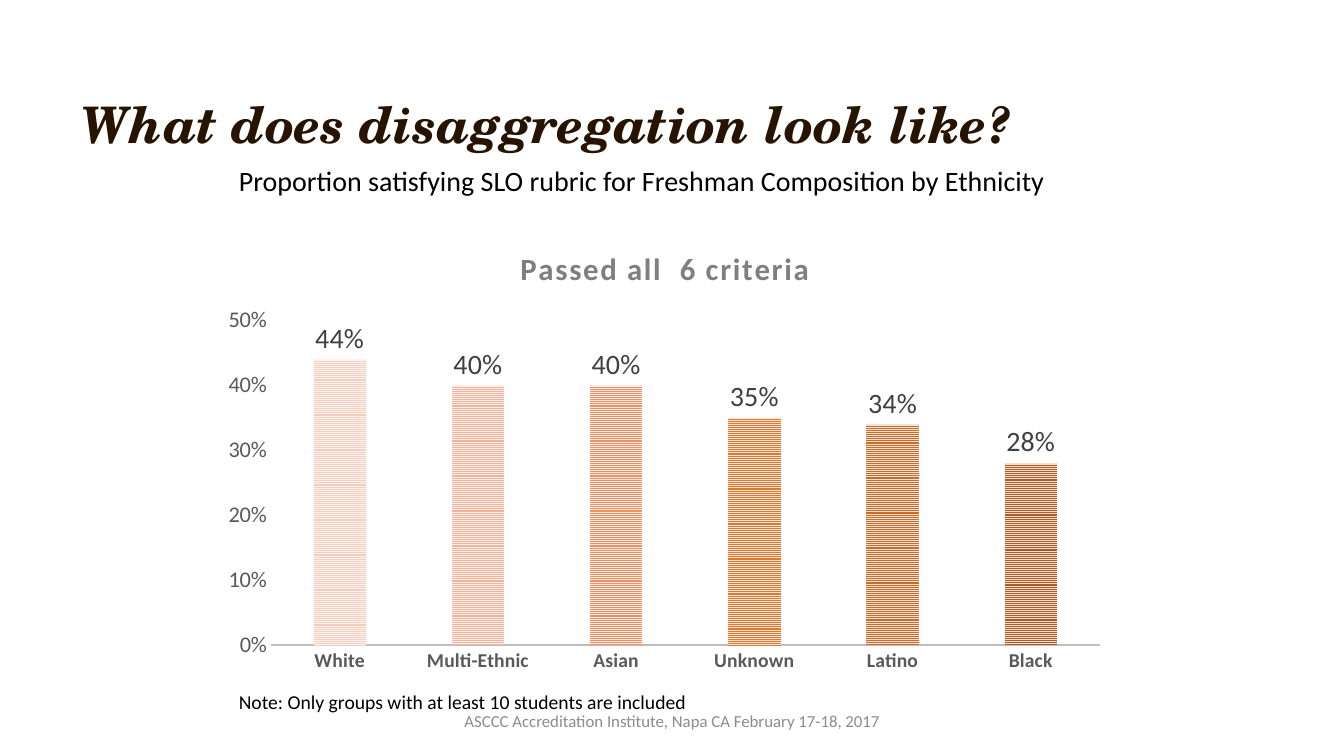
import lxml.etree
import pptx
import pptx.chart.data
import pptx.dml.color
import pptx.enum.chart
import pptx.enum.dml
import pptx.enum.text
import pptx.oxml
import pptx.oxml.ns
import pptx.util

Cm = pptx.util.Cm
Pt = pptx.util.Pt

COLOURS = {
    "heading": "261300",
    "body": "000000",
    "chart title": "7F7F7F",
    "axis text": "595959",
    "axis line": "BFBFBF",
    "label": "404040",
    "footer": "8C8C8C",
}
PASS_RATES = [
    ("White", 0.44, "F6CCBE", "FDF5F2"),
    ("Multi-Ethnic", 0.40, "F3B29A", "FDF0EB"),
    ("Asian", 0.40, "EF9166", "FCE9E0"),
    ("Unknown", 0.35, "E2772F", "F9E4D5"),
    ("Latino", 0.34, "CB6B2A", "F6E1D3"),
    ("Black", 0.28, "AF5C24", "F5DDCE"),
]
PLOT_AREA = {"x": 0.066, "y": 0.205, "w": 0.913, "h": 0.713}


def rgb(value):
    """Turn a hex string into a colour."""
    return pptx.dml.color.RGBColor.from_string(value)


def style_font(font, size, colour, name="Calibri", bold=False, italic=False):
    """Set the look of a font."""
    font.name = name
    font.size = Pt(size)
    font.bold = bold
    font.italic = italic
    font.color.rgb = rgb(COLOURS[colour])


def add_text(page, box, text, size, colour, middle=False, centred=False, spacing=None, **look):
    """Place one line of text in the given box."""
    left, top, width, height = box
    frame = page.shapes.add_textbox(Cm(left), Cm(top), Cm(width), Cm(height)).text_frame
    frame.word_wrap = True
    if middle:
        frame.vertical_anchor = pptx.enum.text.MSO_ANCHOR.MIDDLE
    para = frame.paragraphs[0]
    para.line_spacing = spacing
    if centred:
        para.alignment = pptx.enum.text.PP_ALIGN.CENTER
    span = para.add_run()
    span.text = text
    style_font(span.font, size, colour, **look)


def add_header(page, box):
    """Place the heading and the subtitle that sits below its middle."""
    left, top, width, height = box
    add_text(page, box, "What does disaggregation look like?", 36, "heading",
             middle=True, spacing=0.9, name="TeX Gyre Schola", bold=True, italic=True)
    add_text(page, (left + 3.97, top + 2.72, 21.41, 1.12),
             "Proportion satisfying SLO rubric for Freshman Composition by Ethnicity",
             20, "body")


def add_footer(page, box):
    """Place the note and the event line that overlaps its lower edge."""
    left, top, width, height = box
    add_text(page, (left, top, width, 0.86),
             "Note: Only groups with at least 10 students are included", 14, "body")
    add_text(page, (left + 5.46, top + 0.38, 11.43, 1.02),
             "ASCCC Accreditation Institute, Napa CA February 17-18, 2017",
             12, "footer", middle=True, centred=True)


def fix_plot_area(chart):
    """Give the inner plot area a fixed share of the chart."""
    qn = pptx.oxml.ns.qn
    area = chart.plots[0]._element.getparent()
    for old in area.findall(qn("c:layout")):
        area.remove(old)
    layout = lxml.etree.Element(qn("c:layout"))
    manual = lxml.etree.SubElement(layout, qn("c:manualLayout"))
    settings = {"layoutTarget": "inner", "xMode": "edge", "yMode": "edge", **PLOT_AREA}
    for tag, value in settings.items():
        lxml.etree.SubElement(manual, qn(f"c:{tag}")).set("val", str(value))
    area.insert(0, layout)


def style_axes(chart):
    """Set scales, lines and fonts of both axes."""
    no_tick = pptx.enum.chart.XL_TICK_MARK.NONE
    groups, rates = chart.category_axis, chart.value_axis
    for axis, size, bold in ((groups, 14, True), (rates, 16, False)):
        axis.has_major_gridlines = False
        axis.major_tick_mark = axis.minor_tick_mark = no_tick
        style_font(axis.tick_labels.font, size, "axis text", bold=bold)
    groups.format.line.color.rgb = rgb(COLOURS["axis line"])
    groups.format.line.width = Pt(1.5)
    rates.format.line.fill.background()
    rates.minimum_scale, rates.maximum_scale, rates.major_unit = 0, 0.5, 0.1
    rates.tick_labels.number_format = "0%"
    rates.tick_labels.number_format_is_linked = False


def add_rate_chart(page, box):
    """Place the column chart of pass rates in the given box."""
    data = pptx.chart.data.CategoryChartData(number_format="0%")
    data.categories = [group for group, *_ in PASS_RATES]
    data.add_series("Series 1", [rate for _, rate, *_ in PASS_RATES])
    kind = pptx.enum.chart.XL_CHART_TYPE.COLUMN_CLUSTERED
    chart = page.shapes.add_chart(kind, *map(Cm, box), data).chart
    style_font(chart.font, 10, "body")
    chart.has_legend = False

    chart.has_title = True
    span = chart.chart_title.text_frame.paragraphs[0].add_run()
    span.text = "Passed all  6 criteria"
    style_font(span.font, 22, "chart title", bold=True)
    span.font._element.set("spc", "130")
    chart.chart_title.include_in_layout = False

    plot = chart.plots[0]
    plot.gap_width, plot.overlap = 164, -22
    plot.vary_by_categories = False
    series = plot.series[0]
    for index, (_, _, front, back) in enumerate(PASS_RATES):
        fill = series.points[index].format.fill
        fill.patterned()
        fill.pattern = pptx.enum.dml.MSO_PATTERN.NARROW_HORIZONTAL
        fill.fore_color.rgb, fill.back_color.rgb = rgb(front), rgb(back)

    labels = series.data_labels
    labels.show_value = True
    labels.number_format = "0%"
    labels.number_format_is_linked = False
    labels.position = pptx.enum.chart.XL_LABEL_POSITION.OUTSIDE_END
    style_font(labels.font, 20, "label")
    style_axes(chart)
    fix_plot_area(chart)


def main():
    """Build the deck and save it."""
    deck = pptx.Presentation()
    deck.slide_width, deck.slide_height = Cm(33.87), Cm(19.05)
    page = deck.slides.add_slide(deck.slide_layouts[6])
    add_header(page, (1.8, 1.27, 27.15, 3.89))
    add_rate_chart(page, (5.31, 5.72, 22.89, 11.48))
    add_footer(page, (5.77, 17.27, 21.72, 1.4))
    deck.save("out.pptx")


if __name__ == "__main__":
    main()
